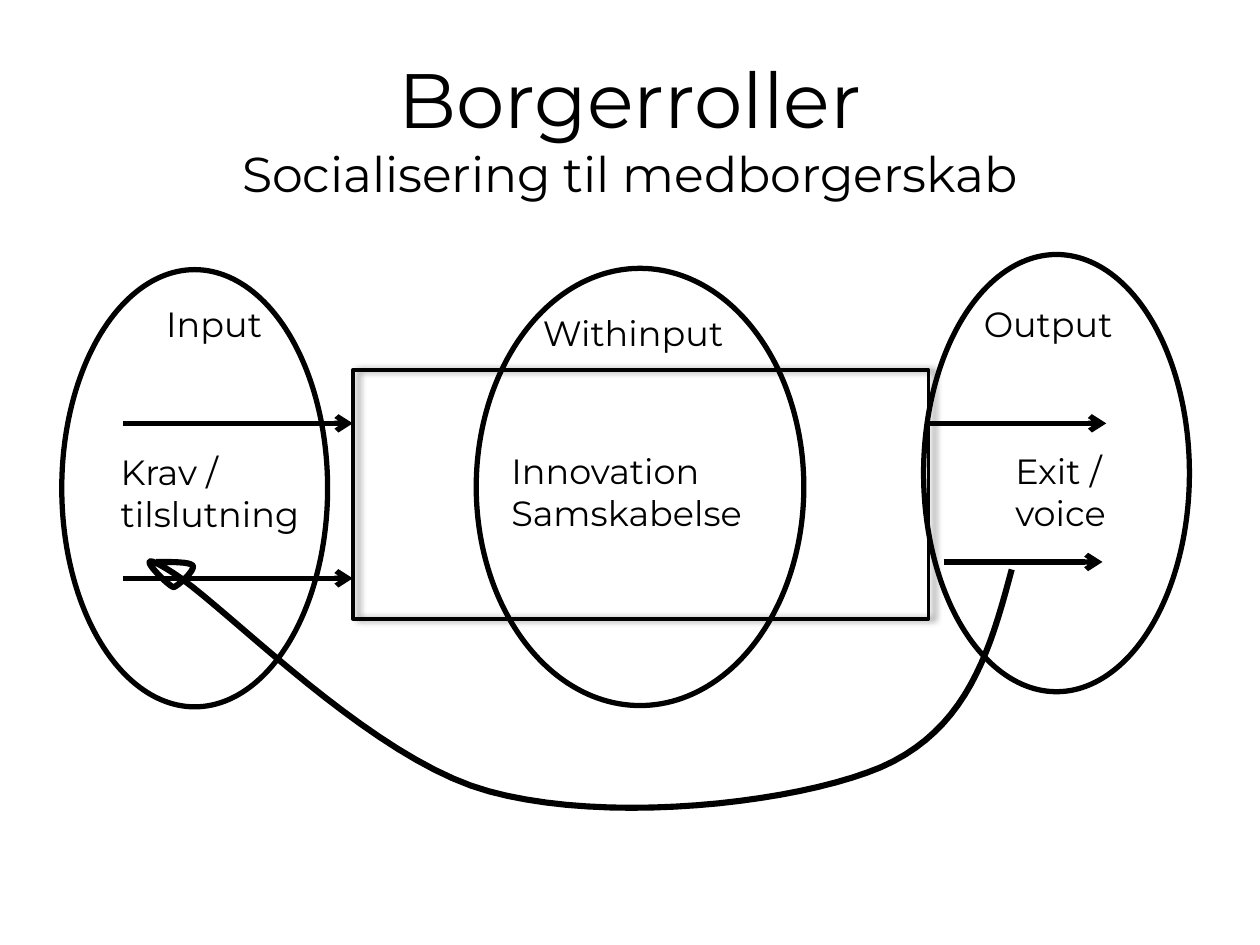
from dataclasses import dataclass

from lxml.etree import SubElement
from pptx import Presentation
from pptx.dml.color import RGBColor
from pptx.enum.shapes import MSO_CONNECTOR, MSO_SHAPE
from pptx.enum.text import MSO_ANCHOR, MSO_AUTO_SIZE, PP_ALIGN
from pptx.oxml.ns import qn
from pptx.util import Inches, Pt

BLACK = RGBColor(0x00, 0x00, 0x00)
FONT = "Montserrat"
COLUMNS, ROWS = 100, 75
DECK_WIDTH, DECK_HEIGHT = Inches(10), Inches(7.5)
CURVE_STEPS = 20


@dataclass(frozen=True)
class Area:
    """A block of grid columns and rows."""
    column: float
    row: float
    columns: float
    rows: float


@dataclass(frozen=True)
class Label:
    """Paragraphs of text in an area."""
    area: Area
    lines: tuple[str, ...]


@dataclass(frozen=True)
class Arrow:
    """A horizontal arrow between two columns."""
    start: float
    end: float
    row: float


SYSTEM = Area(28, 29.4, 45.7, 19.7)
ARROWS = (
    Arrow(9.8, 28, 33.6),
    Arrow(9.8, 28, 45.9),
    Arrow(73.6, 87.8, 33.6),
    Arrow(74.9, 87.5, 44.6),
)
LABELS = (
    Label(Area(12.2, 23.5, 16, 4.4), ("Input",)),
    Label(Area(77.1, 23.5, 15.4, 4.4), ("Output",)),
    Label(Area(42.1, 24.2, 17.3, 4.4), ("Withinput",)),
    Label(Area(39.6, 35.2, 24.7, 7.7), ("Innovation", "Samskabelse")),
    Label(Area(79.6, 35.2, 16, 7.7), ("Exit / voice",)),
    Label(Area(8.6, 35.3, 20.7, 7.7), ("Krav / tilslutning",)),
)
ELLIPSES = (
    Area(4.9, 21.4, 21.1, 34.7),
    Area(73.3, 20.2, 21.1, 34.7),
    Area(37.8, 21.3, 26, 34.7),
)
FEEDBACK_START = (80.3, 45.2)
FEEDBACK_CURVES = (
    ((78.6, 51.6), (76.8, 57.9), (69.9, 60.9)),
    ((63, 63.8), (48.2, 65.4), (38.8, 62.8)),
    ((29.5, 60.3), (18, 48.2), (13.8, 45.5)),
    ((9.6, 42.8), (13.5, 46.7), (13.8, 46.6)),
    ((14.1, 46.5), (15.5, 45.3), (15.3, 44.9)),
    ((15.1, 44.6), (13.8, 44.6), (12.4, 44.6)),
)


def across(columns: float) -> int:
    """Turn columns into a length."""
    return round(DECK_WIDTH * columns / COLUMNS)


def down(rows: float) -> int:
    """Turn rows into a length."""
    return round(DECK_HEIGHT * rows / ROWS)


def frame(area: Area) -> tuple[int, int, int, int]:
    """Give left, top, width and height of an area."""
    return across(area.column), down(area.row), across(area.columns), down(area.rows)


def outline(shape, width: float) -> None:
    """Leave a shape unfilled with a plain black line."""
    shape.shadow.inherit = False
    shape.fill.background()
    shape.line.color.rgb = BLACK
    shape.line.width = Pt(width)


def add_outline(page, kind: MSO_SHAPE, area: Area, width: float):
    """Draw an unfilled preset shape."""
    shape = page.shapes.add_shape(kind, *frame(area))
    outline(shape, width)
    return shape


def cast_shadow(shape) -> None:
    """Cast a soft shadow to the right."""
    effects = shape._element.spPr.find(qn("a:effectLst"))
    shadow = SubElement(effects, qn("a:outerShdw"), blurRad=str(Pt(4)),
                        dist=str(Pt(3)), dir="0", rotWithShape="0")
    color = SubElement(shadow, qn("a:srgbClr"), val=str(BLACK))
    SubElement(color, qn("a:alpha"), val="40000")


def add_arrow(page, arrow: Arrow) -> None:
    """Draw a straight arrow."""
    line = page.shapes.add_connector(
        MSO_CONNECTOR.STRAIGHT, across(arrow.start), down(arrow.row),
        across(arrow.end), down(arrow.row))
    line.line.color.rgb = BLACK
    line.line.width = Pt(3)
    SubElement(line.line._get_or_add_ln(), qn("a:tailEnd"), type="arrow")
    SubElement(line._element.spPr, qn("a:effectLst"))


def add_span(para, text: str, size: float) -> None:
    """Add one run of text."""
    span = para.add_run()
    span.text = text
    span.font.name = FONT
    span.font.size = Pt(size)
    span.font.color.rgb = BLACK


def add_title(page) -> None:
    """Write the heading and its second line."""
    box = page.shapes.add_textbox(*frame(Area(0, 2.6, COLUMNS, 15)))
    box.text_frame.word_wrap = True
    box.text_frame.vertical_anchor = MSO_ANCHOR.MIDDLE
    para = box.text_frame.paragraphs[0]
    para.alignment = PP_ALIGN.CENTER
    add_span(para, "Borgerroller", 44)
    para.add_line_break()
    add_span(para, "Socialisering til medborgerskab", 28)


def add_label(page, label: Label) -> None:
    """Write a label, one paragraph per line."""
    box = page.shapes.add_textbox(*frame(label.area))
    text = box.text_frame
    text.word_wrap = True
    text.auto_size = MSO_AUTO_SIZE.SHAPE_TO_FIT_TEXT
    for index, line in enumerate(label.lines):
        para = text.add_paragraph() if index else text.paragraphs[0]
        add_span(para, line, 20)


def curve_points(start, first, second, end) -> list[tuple[int, int]]:
    """Sample a cubic curve after its start."""
    points = []
    for step in range(1, CURVE_STEPS + 1):
        t = step / CURVE_STEPS
        weights = ((1 - t) ** 3, 3 * t * (1 - t) ** 2, 3 * t ** 2 * (1 - t), t ** 3)
        column, row = (sum(w * value for w, value in zip(weights, values))
                       for values in zip(start, first, second, end))
        points.append((across(column), down(row)))
    return points


def add_feedback(page) -> None:
    """Draw the curved loop from output back to input."""
    start = FEEDBACK_START
    builder = page.shapes.build_freeform(across(start[0]), down(start[1]))
    for curve in FEEDBACK_CURVES:
        builder.add_line_segments(curve_points(start, *curve), close=False)
        start = curve[-1]
    outline(builder.convert_to_shape(), 3.5)


def main() -> None:
    """Build the slide and save it."""
    deck = Presentation()
    deck.slide_width, deck.slide_height = DECK_WIDTH, DECK_HEIGHT
    page = deck.slides.add_slide(deck.slide_layouts[6])
    add_title(page)
    cast_shadow(add_outline(page, MSO_SHAPE.RECTANGLE, SYSTEM, 2.25))
    for arrow in ARROWS:
        add_arrow(page, arrow)
    for label in LABELS:
        add_label(page, label)
    add_feedback(page)
    for area in ELLIPSES:
        add_outline(page, MSO_SHAPE.OVAL, area, 3)
    deck.save("out.pptx")


if __name__ == "__main__":
    main()
